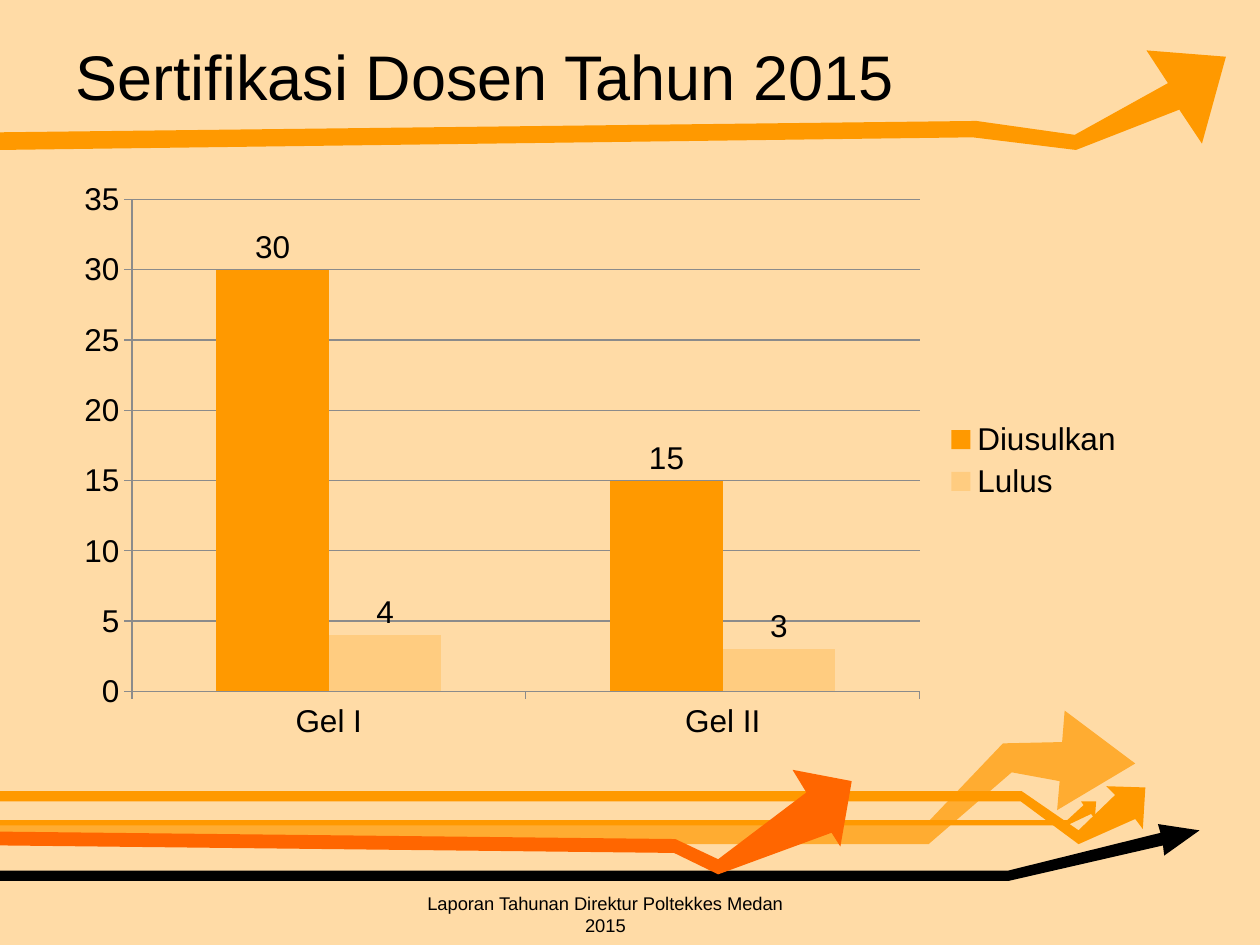
from pptx import Presentation
from pptx.chart.data import CategoryChartData
from pptx.dml.color import RGBColor
from pptx.enum.chart import (XL_CHART_TYPE, XL_LABEL_POSITION,
                             XL_LEGEND_POSITION, XL_TICK_MARK)
from pptx.enum.text import MSO_ANCHOR, PP_ALIGN
from pptx.util import Inches, Pt

COLUMNS = XL_CHART_TYPE.COLUMN_CLUSTERED
LABEL_ABOVE = XL_LABEL_POSITION.OUTSIDE_END
LEGEND_RIGHT = XL_LEGEND_POSITION.RIGHT
TICK_OUTSIDE = XL_TICK_MARK.OUTSIDE
TOP, MIDDLE = MSO_ANCHOR.TOP, MSO_ANCHOR.MIDDLE
LEFT, CENTER = PP_ALIGN.LEFT, PP_ALIGN.CENTER

FONT = "Arial"
BACKGROUND = RGBColor(0xFF, 0xDB, 0xA6)
BLACK = RGBColor(0x00, 0x00, 0x00)
ORANGE = RGBColor(0xFF, 0x99, 0x00)
AMBER = RGBColor(0xFF, 0xAC, 0x31)
DARK_ORANGE = RGBColor(0xFF, 0x66, 0x00)
PEACH = RGBColor(0xFF, 0xCC, 0x80)
GRAY = RGBColor(0x8B, 0x8B, 0x8B)

# Arrow outlines in inches, from back to front
WIDE_ARROW = [(0, 6.53), (7.36, 6.53), (7.96, 5.9), (8.43, 5.89),
              (8.45, 5.64), (9.01, 6.06), (8.39, 6.43), (8.41, 6.2),
              (8.03, 6.13), (7.37, 6.7), (0, 6.7)]
THIN_ARROW = [(0, 6.51), (8.47, 6.51), (8.6, 6.39), (8.58, 6.36),
              (8.7, 6.36), (8.69, 6.5), (8.66, 6.46), (8.47, 6.55),
              (0, 6.55)]
DIPPING_ARROW = [(0, 6.28), (8.11, 6.28), (8.56, 6.59), (8.85, 6.31),
                 (8.78, 6.24), (9.09, 6.25), (9.07, 6.58), (9.01, 6.5),
                 (8.56, 6.7), (8.1, 6.36), (0, 6.36)]
BLACK_ARROW = [(0, 6.91), (8, 6.91), (9.21, 6.61), (9.19, 6.54),
               (9.52, 6.59), (9.24, 6.79), (9.23, 6.71), (8.01, 6.99),
               (0, 6.99)]
DARK_ARROW = [(-0.05, 6.71), (5.35, 6.77), (5.7, 6.94), (6.6, 6.61),
              (6.67, 6.72), (6.76, 6.2), (6.29, 6.11), (6.4, 6.29),
              (5.7, 6.82), (5.36, 6.66), (-0.08, 6.6)]
TITLE_ARROW = [(0, 1.19), (7.72, 1.09), (8.54, 1.19), (9.36, 0.87),
               (9.54, 1.14), (9.73, 0.45), (9.1, 0.4), (9.27, 0.66),
               (8.53, 1.07), (7.75, 0.96), (0, 1.05)]
ARROWS = [(WIDE_ARROW, AMBER), (THIN_ARROW, ORANGE), (DIPPING_ARROW, ORANGE),
          (BLACK_ARROW, BLACK), (DARK_ARROW, DARK_ORANGE),
          (TITLE_ARROW, ORANGE)]

CATEGORIES = ["Gel I", "Gel II"]
SERIES = [("Diusulkan", (30, 15), ORANGE), ("Lulus", (4, 3), PEACH)]


def add_arrow(page, points, color):
    corners = [(Inches(x), Inches(y)) for x, y in points]
    builder = page.shapes.build_freeform(*corners[0])
    builder.add_line_segments(corners[1:], close=True)
    arrow = builder.convert_to_shape()
    arrow.shadow.inherit = False
    arrow.fill.solid()
    arrow.fill.fore_color.rgb = color
    arrow.line.fill.background()


def add_text(page, text, left, top, width, height, size=18, align=LEFT,
             anchor=TOP):
    box = page.shapes.add_textbox(Inches(left), Inches(top),
                                  Inches(width), Inches(height))
    frame = box.text_frame
    frame.word_wrap = True
    frame.vertical_anchor = anchor
    para = frame.paragraphs[0]
    para.alignment = align
    span = para.add_run()
    span.text = text
    style_font(span.font, size)


def style_font(font, size):
    font.name = FONT
    font.size = Pt(size)
    font.color.rgb = BLACK


def style_line(line):
    line.color.rgb = GRAY
    line.width = Pt(0.75)


def add_column_chart(page, left, top, width, height):
    data = CategoryChartData()
    data.categories = CATEGORIES
    for name, values, _ in SERIES:
        data.add_series(name, values)
    chart = page.shapes.add_chart(COLUMNS, Inches(left), Inches(top),
                                  Inches(width), Inches(height), data).chart
    chart.has_title = False
    style_font(chart.font, 18)

    # Legend
    chart.has_legend = True
    chart.legend.position = LEGEND_RIGHT
    chart.legend.include_in_layout = False

    # Axes
    for axis in (chart.category_axis, chart.value_axis):
        axis.major_tick_mark = TICK_OUTSIDE
        style_line(axis.format.line)
    scale = chart.value_axis
    scale.minimum_scale, scale.maximum_scale, scale.major_unit = 0, 35, 5
    scale.has_major_gridlines = True
    style_line(scale.major_gridlines.format.line)

    # Columns and their values
    plot = chart.plots[0]
    plot.vary_by_categories = False
    plot.gap_width = 150
    plot.overlap = 0
    for series, (_, _, color) in zip(plot.series, SERIES):
        series.format.fill.solid()
        series.format.fill.fore_color.rgb = color
        labels = series.data_labels
        labels.show_value = True
        labels.position = LABEL_ABOVE
        style_font(labels.font, 18)


def main():
    deck = Presentation()
    deck.slide_width, deck.slide_height = Inches(10), Inches(7.5)
    page = deck.slides.add_slide(deck.slide_layouts[6])
    page.background.fill.solid()
    page.background.fill.fore_color.rgb = BACKGROUND

    for points, color in ARROWS:
        add_arrow(page, points, color)
    add_text(page, "Sertifikasi Dosen Tahun 2015", 0.5, 0.28, 9.07, 0.63,
             size=36, anchor=MIDDLE)
    add_column_chart(page, 0.5, 1.35, 8.52, 4.61)
    add_text(page, "Laporan Tahunan Direktur Poltekkes Medan 2015",
             3.22, 7.03, 3.17, 0.31, size=10.5, align=CENTER)
    deck.save("out.pptx")


if __name__ == "__main__":
    main()
